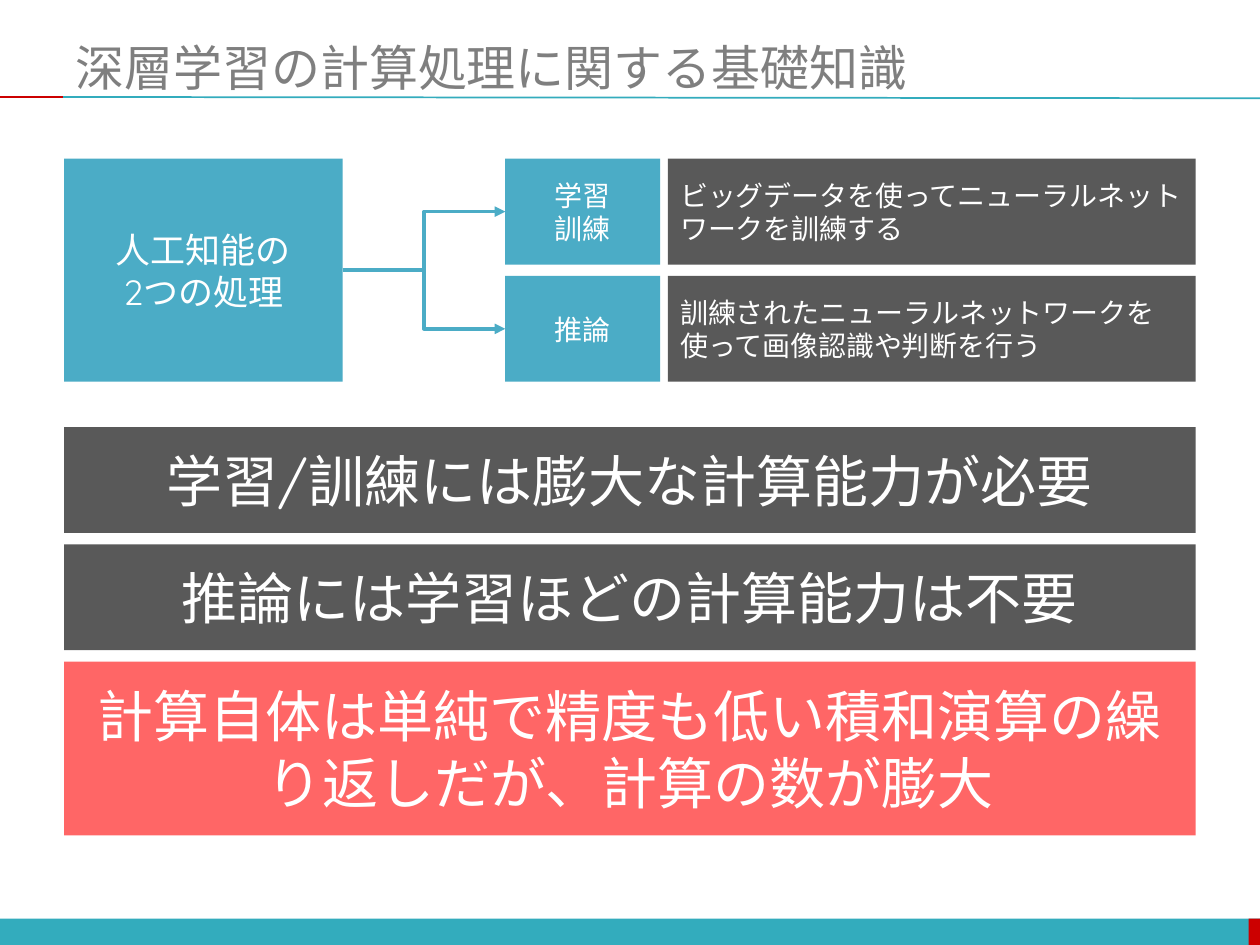
from lxml.etree import SubElement
from pptx import Presentation
from pptx.dml.color import RGBColor
from pptx.enum.shapes import MSO_CONNECTOR as Connector, MSO_SHAPE as Shape
from pptx.enum.text import MSO_ANCHOR as Anchor, MSO_AUTO_SIZE as AutoSize, PP_ALIGN as Align
from pptx.oxml.ns import qn
from pptx.util import Inches, Pt

TITLE = "深層学習の計算処理に関する基礎知識"
TOPIC = "人工知能の\n2つの処理"
PROCESSES = [
    ("学習\n訓練", "ビッグデータを使ってニューラルネットワークを訓練する"),
    ("推論", "訓練されたニューラルネットワークを使って画像認識や判断を行う"),
]
CONCLUSIONS = [
    ("学習/訓練には膨大な計算能力が必要", "gray", 0.84),
    ("推論には学習ほどの計算能力は不要", "gray", 0.84),
    ("計算自体は単純で精度も低い積和演算の繰り返しだが、計算の数が膨大", "coral", 1.38),
]
COLORS = {"teal": "33ACBD", "red": "CC0000", "blue": "4BACC6", "gray": "595959",
          "coral": "FF6666", "title": "7F7F7F", "white": "FFFFFF"}
FONT = "Quicksand"
LEFT, WIDTH = 0.51, 8.98
ROW_HEIGHT, GAP = 0.84, 0.09
PROCESS_TOP, CONCLUSION_TOP = 1.26, 3.39
TOPIC_WIDTH = 2.21
NAME_LEFT, NAME_WIDTH = 4.01, 1.23
DETAIL_LEFT = 5.3


def color(name):
    return RGBColor.from_string(COLORS[name])


def write(frame, text, size, font_color, align):
    frame.text = text
    frame.word_wrap = True
    frame.vertical_anchor = Anchor.MIDDLE
    for paragraph in frame.paragraphs:
        paragraph.alignment = align
        for run in paragraph.runs:
            run.font.name = FONT
            run.font.size = Pt(size)
            run.font.color.rgb = color(font_color)


def add_box(slide, left, top, width, height, fill, text="", size=16, align=Align.CENTER):
    box = slide.shapes.add_shape(
        Shape.RECTANGLE, Inches(left), Inches(top), Inches(width), Inches(height))
    box.shadow.inherit = False
    box.fill.solid()
    box.fill.fore_color.rgb = color(fill)
    box.line.fill.background()
    if text:
        write(box.text_frame, text, size, "white", align)
    return box


def add_line(slide, kind, start, end, line_color, width):
    line = slide.shapes.add_connector(kind, *map(Inches, start + end))
    line.line.color.rgb = color(line_color)
    line.line.width = Pt(width)
    SubElement(line._element.spPr, qn("a:effectLst"))
    return line


def add_frame(slide):
    add_box(slide, 0, 7.29, 10, 0.22, "teal")
    add_box(slide, 9.91, 7.29, 0.1, 0.22, "red")
    add_line(slide, Connector.STRAIGHT, (0.5, 0.77), (10, 0.78), "teal", 1)
    add_line(slide, Connector.STRAIGHT, (0, 0.77), (0.5, 0.77), "red", 1)
    title = slide.shapes.title
    title.left, title.top, title.width, title.height = map(Inches, (0.5, 0.3, 9.5, 0.46))
    write(title.text_frame, TITLE, 28, "title", Align.LEFT)
    title.text_frame.auto_size = AutoSize.NONE


def add_processes(slide):
    topic_height = len(PROCESSES) * (ROW_HEIGHT + GAP) - GAP
    topic = add_box(slide, LEFT, PROCESS_TOP, TOPIC_WIDTH, topic_height, "blue", TOPIC, 20)
    topic_side = (LEFT + TOPIC_WIDTH, PROCESS_TOP + topic_height / 2)
    for row, (name, detail) in enumerate(PROCESSES):
        top = PROCESS_TOP + row * (ROW_HEIGHT + GAP)
        add_box(slide, DETAIL_LEFT, top, LEFT + WIDTH - DETAIL_LEFT, ROW_HEIGHT, "gray",
                detail, align=Align.LEFT)
        process = add_box(slide, NAME_LEFT, top, NAME_WIDTH, ROW_HEIGHT, "blue", name)
        arrow = add_line(slide, Connector.ELBOW, topic_side,
                         (NAME_LEFT, top + ROW_HEIGHT / 2), "blue", 2)
        arrow.begin_connect(topic, 3)
        arrow.end_connect(process, 1)
        SubElement(arrow.line._get_or_add_ln(), qn("a:tailEnd"), type="triangle")


def add_conclusions(slide):
    top = CONCLUSION_TOP
    for text, fill, height in CONCLUSIONS:
        add_box(slide, LEFT, top, WIDTH, height, fill, text, 32)
        top += height + GAP


def main():
    """Build the slide on the basics of deep learning computation."""
    deck = Presentation()
    deck.slide_width, deck.slide_height = Inches(10), Inches(7.5)
    slide = deck.slides.add_slide(deck.slide_layouts[5])
    add_frame(slide)
    add_processes(slide)
    add_conclusions(slide)
    deck.save("out.pptx")


if __name__ == "__main__":
    main()
